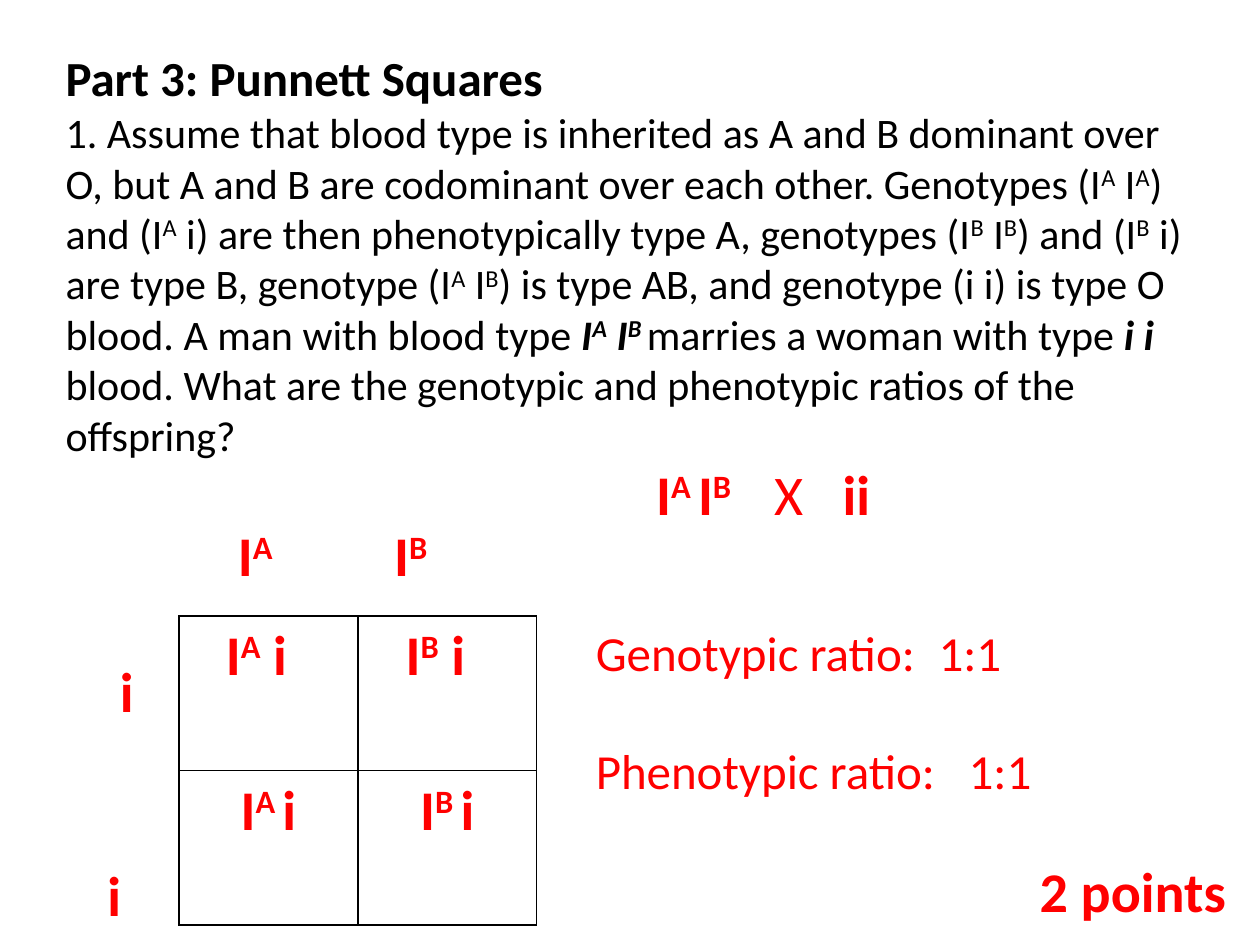
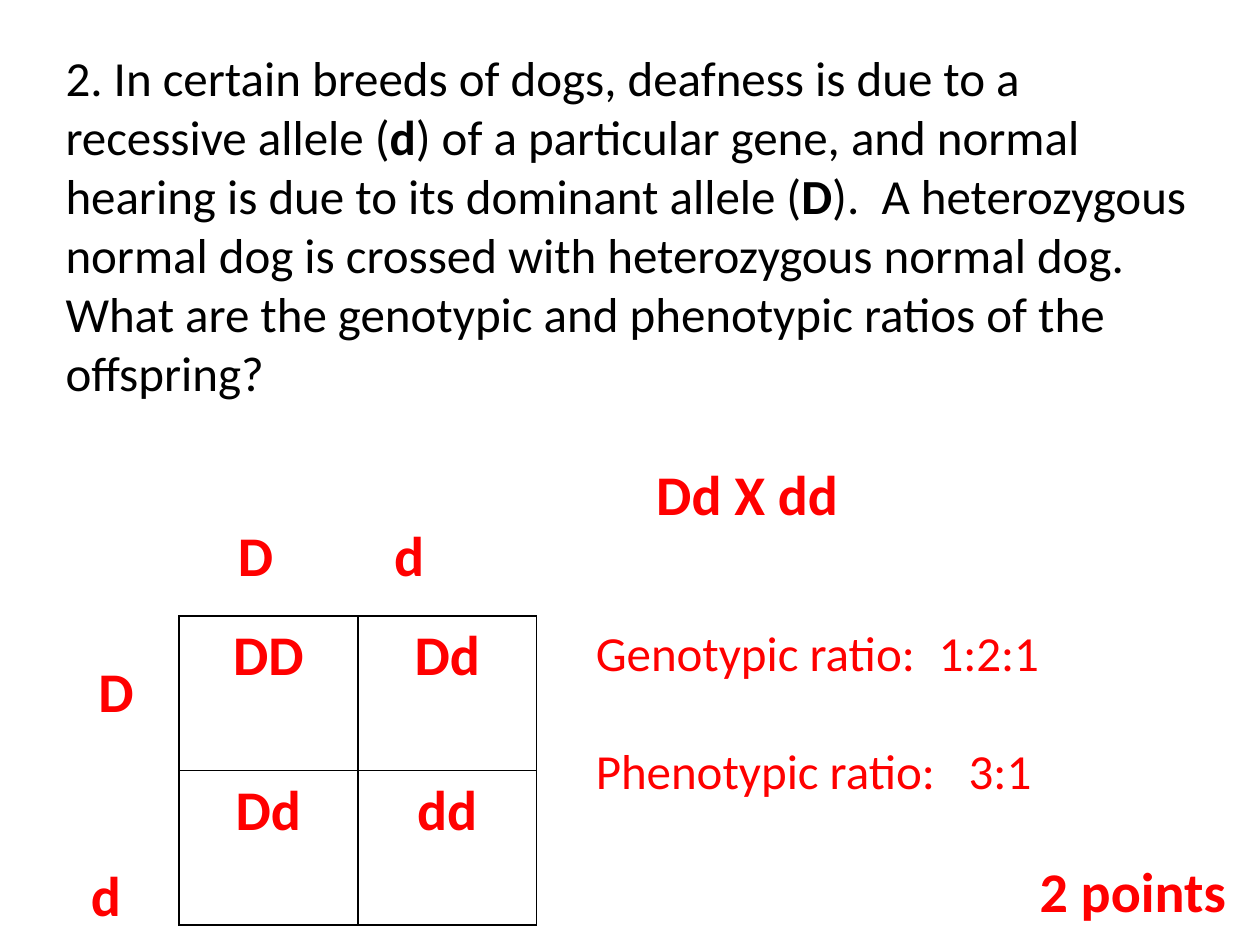
from lxml import etree
from pptx import Presentation
from pptx.dml.color import RGBColor
from pptx.enum.text import MSO_ANCHOR, MSO_AUTO_SIZE, PP_ALIGN
from pptx.oxml.ns import qn
from pptx.util import Inches, Pt

BLACK = RGBColor(0, 0, 0)
RED = RGBColor(0xFF, 0, 0)
FONT = "Calibri"
LEFT, CENTER, RIGHT = PP_ALIGN.LEFT, PP_ALIGN.CENTER, PP_ALIGN.RIGHT
TOP = MSO_ANCHOR.TOP
GROW = MSO_AUTO_SIZE.SHAPE_TO_FIT_TEXT
TITLE_ONLY = 5

# Boxes: left, top, width, height in inches
POINTS_BOX = (7.58, 6.75, 2.25, 0.64)
CROSS_BOX = (5.11, 3.6, 3.55, 0.64)
SQUARE_BOX = (1.42, 4.89, 2.84, 2.45)
COLUMN_BOX = (1.79, 4.08, 2.47, 0.64)
ROW_BOX = (0.33, 5.16, 0.83, 1.9)
RATIO_BOX = (4.63, 4.89, 5.02, 1.51)

# Each mark switches its style on and off within a text
BOLD, ITALIC, SUPER = "*", "_", "^"


def split_marks(text):
    """Yield (piece, set of active marks)."""
    active, piece = set(), ""
    for char in text:
        if char in (BOLD, ITALIC, SUPER):
            if piece:
                yield piece, set(active)
            active ^= {char}
            piece = ""
        else:
            piece += char
    if piece:
        yield piece, active


def write(p, text, size, color=RED, align=LEFT, gap=0, tabs=()):
    p.alignment = align
    p.space_before = Pt(gap)
    if tabs:
        tab_list = etree.SubElement(p._p.get_or_add_pPr(), qn("a:tabLst"))
        for pos in tabs:
            etree.SubElement(tab_list, qn("a:tab"), pos=str(Inches(pos)), algn="l")
    for piece, marks in split_marks(text):
        r = p.add_run()
        r.text = piece
        r.font.name, r.font.size = FONT, Pt(size)
        r.font.bold, r.font.italic = BOLD in marks, ITALIC in marks
        r.font.color.rgb = color
        if SUPER in marks:
            r.font._element.set("baseline", "30000")


def add_text(slide, box, lines, size, align=LEFT, gap=0, tabs=()):
    """Add one text box; tabs holds the tab stops of each line."""
    sp = slide.shapes.add_textbox(*map(Inches, box))
    tf = sp.text_frame
    tf.word_wrap, tf.auto_size = True, GROW
    for i, line in enumerate(lines):
        p = tf.add_paragraph() if i else tf.paragraphs[0]
        write(p, line, size, align=align, gap=gap if i else 0,
              tabs=tabs[i] if tabs else ())


def add_question(slide, lines, height):
    sp = slide.shapes.title
    sp.left, sp.top, sp.width, sp.height = map(Inches, (0.42, 0.33, 9.17, height))
    tf = sp.text_frame
    tf.word_wrap, tf.auto_size, tf.vertical_anchor = True, GROW, TOP
    for i, (line, size) in enumerate(lines):
        p = tf.add_paragraph() if i else tf.paragraphs[0]
        write(p, line, size, BLACK)


def add_borders(cell):
    tcPr = cell._tc.get_or_add_tcPr()
    for side in ("a:lnL", "a:lnR", "a:lnT", "a:lnB"):
        ln = etree.SubElement(tcPr, qn(side), w=str(Pt(1)))
        fill = etree.SubElement(ln, qn("a:solidFill"))
        etree.SubElement(fill, qn("a:srgbClr"), val=str(BLACK))


def add_punnett_square(slide, box, offspring, parents, top_margin_right):
    """Draw the grid with the gametes of both parents along its edges."""
    table = slide.shapes.add_table(2, 2, *map(Inches, box)).table
    table.first_row = table.horz_banding = False
    for i, row in enumerate(offspring):
        for j, genotype in enumerate(row):
            cell = table.cell(i, j)
            add_borders(cell)
            cell.fill.background()
            if i == 0:
                cell.margin_right = Inches(top_margin_right)
            write(cell.text_frame.paragraphs[0], genotype, 32, align=CENTER)
    columns, rows = parents
    add_text(slide, COLUMN_BOX, ["\t".join(columns)], 32, tabs=[[1.24]])
    add_text(slide, ROW_BOX, rows, 32, RIGHT, gap=78)


def add_problem(prs, question, height, cross, offspring, parents, ratios,
                top_margin_right=0.1):
    slide = prs.slides.add_slide(prs.slide_layouts[TITLE_ONLY])
    add_question(slide, question, height)
    add_text(slide, POINTS_BOX, ["*2 points*"], 32, RIGHT)
    add_punnett_square(slide, SQUARE_BOX, offspring, parents, top_margin_right)
    add_text(slide, CROSS_BOX, [cross], 32, tabs=[[0.94, 1.48]])
    genotypic, phenotypic = ratios
    add_text(slide, RATIO_BOX,
             [f"Genotypic ratio:\t{genotypic}", f"Phenotypic ratio:\t{phenotypic}"],
             28, gap=34, tabs=[[2.72], [2.96]])


def main():
    prs = Presentation()
    prs.slide_width, prs.slide_height = Inches(10), Inches(7.5)

    # Blood types
    add_problem(
        prs,
        [("*Part 3: Punnett Squares*", 28),
         ("1. Assume that blood type is inherited as A and B dominant over O, but "
          "A and B are codominant over each other. Genotypes (I^A^ I^A^) and "
          "(I^A^ i) are then phenotypically type A, genotypes (I^B^ I^B^) and "
          "(I^B^ i) are type B, genotype (I^A^ I^B^) is type AB, and genotype "
          "(i i) is type O blood. A man with blood type *_I^A^ I^B ^_*marries a "
          "woman with type *_i i _*blood. What are the genotypic and phenotypic "
          "ratios of the offspring?", 24)],
        height=3.4,
        cross="*I^A ^I^B^*\tX\t*ii*",
        offspring=[["*I^A^ i*", "*I^B^ i*"], ["*I^A ^i*", "*I^B ^i*"]],
        parents=(["*I^A^*", "*I^B^*"], ["*i*", "*i *"]),
        ratios=("1:1", "1:1"),
        top_margin_right=0.29)

    # Deafness in dogs
    add_problem(
        prs,
        [("2. In certain breeds of dogs, deafness is due to a recessive allele "
          "(*d*) of a particular gene, and normal hearing is due to its dominant "
          "allele (*D*).  A heterozygous normal dog is crossed with heterozygous "
          "normal dog.  What are the genotypic and phenotypic ratios of the "
          "offspring?", 28)],
        height=2.93,
        cross="*Dd X dd*",
        offspring=[["*DD*", "*Dd*"], ["*Dd*", "*dd*"]],
        parents=(["*D*", "*d*"], ["*D*", "*d *"]),
        ratios=("1:2:1", "3:1"))

    prs.save("out.pptx")


if __name__ == "__main__":
    main()
